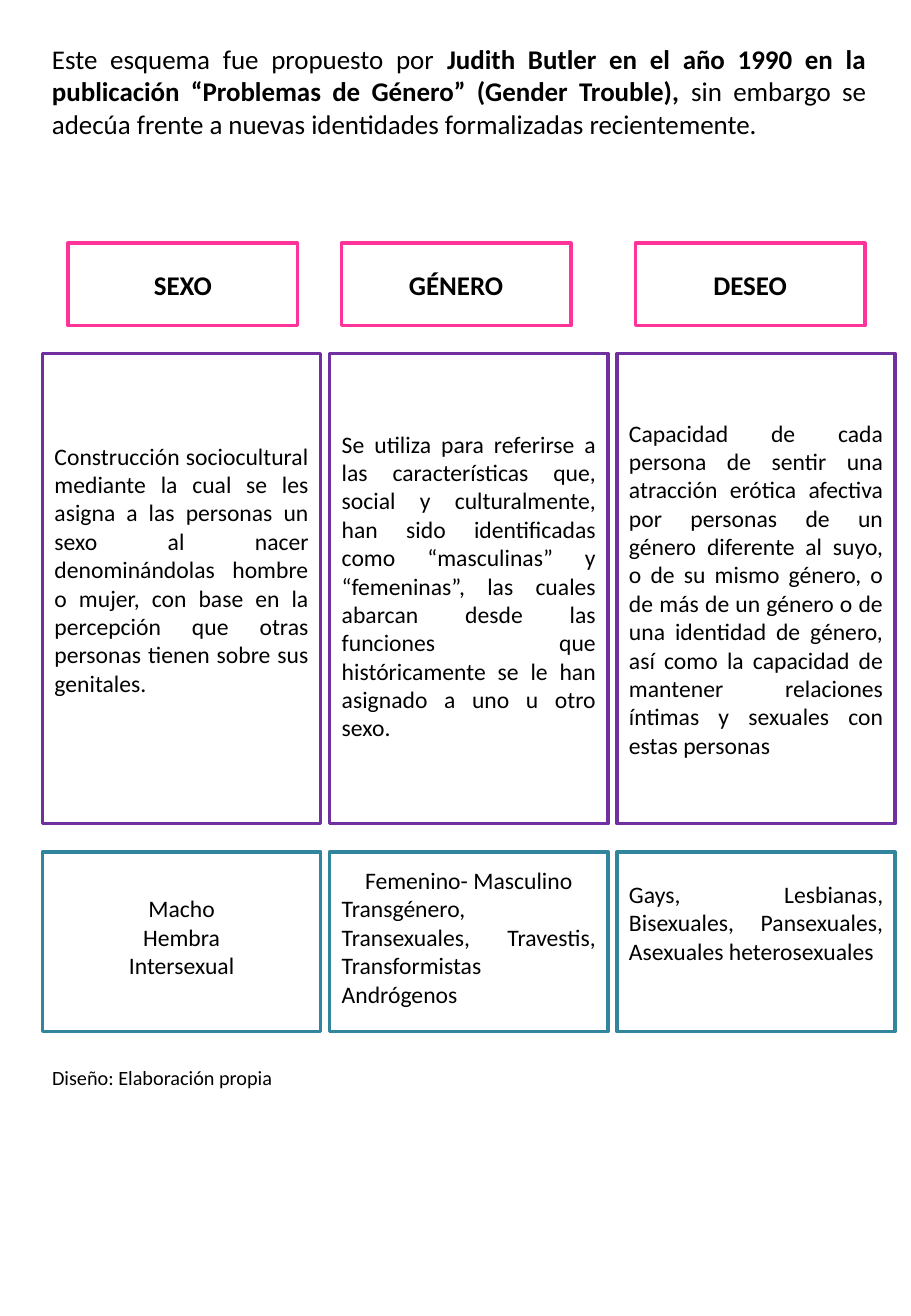
from pptx import Presentation
from pptx import util as u
from pptx.dml.color import RGBColor
from pptx.enum import shapes, text

CENTER, JUSTIFY, LEFT = text.PP_ALIGN.CENTER, text.PP_ALIGN.JUSTIFY, text.PP_ALIGN.LEFT
FONT, BLACK = "Calibri", "000000"
PINK, PURPLE, TEAL = "FF3399", "7030A0", "31859C"

INTRO = [
    ("Este esquema fue propuesto por ", False),
    ("Judith Butler en el año 1990 en la publicación “Problemas de Género” (Gender Trouble), ", True),
    ("sin embargo se adecúa frente a nuevas identidades formalizadas recientemente.", False),
]
CREDIT = [("Diseño: Elaboración propia", False)]
HEADINGS = [("SEXO", 0.56), ("GÉNERO", 2.81), ("DESEO", 5.23)]
DEFINITIONS = [
    ([("Construcción sociocultural mediante la cual se les asigna a las personas un sexo al nacer "
       "denominándolas hombre o mujer, con base en la percepción que otras personas tienen sobre "
       "sus genitales.", JUSTIFY)], 0.32),
    ([("Se utiliza para referirse a las características que, social y culturalmente, han sido "
       "identificadas como “masculinas” y “femeninas”, las cuales abarcan desde las funciones que "
       "históricamente se le han asignado a uno u otro sexo.", JUSTIFY)], 0.05),
    ([("Capacidad de cada persona de sentir una atracción erótica afectiva por personas de un género "
       "diferente al suyo, o de su mismo género, o de más de un género o de una identidad de género, "
       "así como la capacidad de mantener relaciones íntimas y sexuales con estas personas",
       JUSTIFY)], 0),
]
EXAMPLES = [
    ([("Macho", CENTER), ("Hembra", CENTER), ("Intersexual", CENTER)], 0.08),
    ([("Femenino- Masculino", CENTER),
      ("Transgénero, Transexuales, Travestis, Transformistas", JUSTIFY),
      ("Andrógenos", JUSTIFY)], 0.08),
    ([("Gays, Lesbianas, Bisexuales, Pansexuales, Asexuales heterosexuales", JUSTIFY)], 0.32),
]

GRID_LEFT, COLUMN_STEP, COLUMN_WIDTH = 0.35, 2.365, 2.29
TEXT_LEFT = 0.33
ROWS = [(DEFINITIONS, 2.91, 3.87, PURPLE), (EXAMPLES, 7.01, 1.48, TEAL)]

presentation = Presentation()
presentation.slide_width, presentation.slide_height = u.Inches(7.5), u.Inches(10.83)
slide = presentation.slides.add_slide(presentation.slide_layouts[6])


def color(value):
    return RGBColor.from_string(value)


def style(paragraph, size, alignment, bold=None):
    paragraph.alignment = alignment
    paragraph.font.name = FONT
    paragraph.font.size = u.Pt(size)
    paragraph.font.color.rgb = color(BLACK)
    paragraph.font.bold = bold


def add_box(place, line_color, lines, size, bold=False, lift=0):
    shape = slide.shapes.add_shape(shapes.MSO_SHAPE.RECTANGLE, *map(u.Inches, place))
    shape.shadow.inherit = False
    shape.fill.background()
    shape.line.color.rgb = color(line_color)
    shape.line.width = u.Pt(2)
    frame = shape.text_frame
    frame.word_wrap = True
    frame.vertical_anchor = text.MSO_ANCHOR.MIDDLE
    frame.margin_bottom = u.Inches(0.05 + lift)
    frame.text = "\n".join(words for words, _ in lines)
    for paragraph, (_, alignment) in zip(frame.paragraphs, lines):
        style(paragraph, size, alignment, bold)


def add_note(place, runs, size, alignment):
    frame = slide.shapes.add_textbox(*map(u.Inches, place)).text_frame
    frame.word_wrap = True
    paragraph = frame.paragraphs[0]
    style(paragraph, size, alignment)
    for words, bold in runs:
        run = paragraph.add_run()
        run.text = words
        run.font.bold = bold


for heading, left in HEADINGS:
    add_box((left, 2, 1.89, 0.68), PINK, [(heading, CENTER)], 16, bold=True)

add_note((TEXT_LEFT, 0.3, 6.9, 1.45), INTRO, 16, JUSTIFY)

for cells, top, height, line_color in ROWS:
    for column, (lines, lift) in enumerate(cells):
        left = GRID_LEFT + column * COLUMN_STEP
        add_box((left, top, COLUMN_WIDTH, height), line_color, lines, 14, lift=lift)

add_note((TEXT_LEFT, 8.72, 2.35, 0.31), CREDIT, 12, LEFT)

presentation.save("out.pptx")
